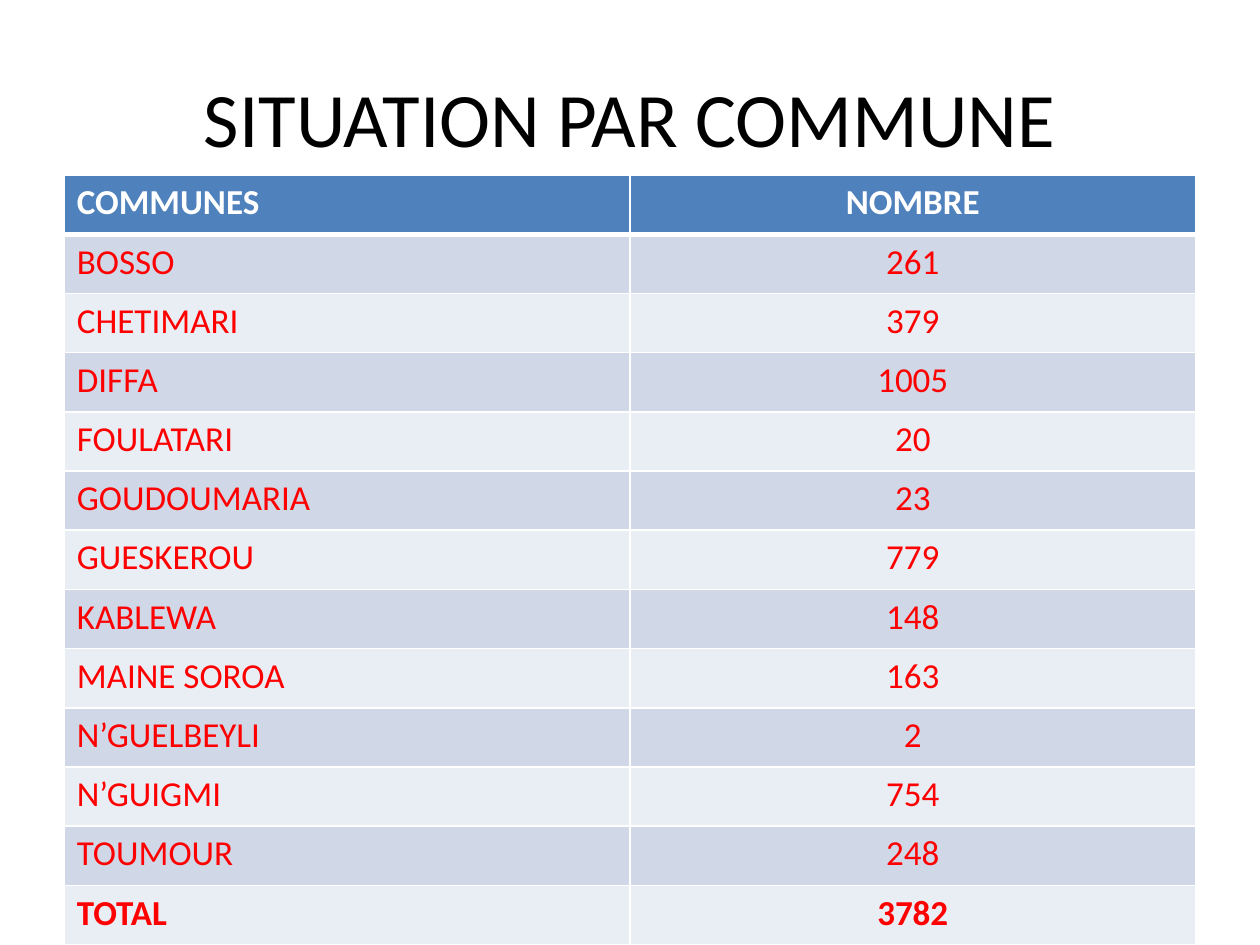
from pptx import Presentation
from pptx.dml.color import RGBColor
from pptx.enum.text import MSO_ANCHOR, PP_ALIGN
from pptx.oxml.ns import qn
from pptx.util import Pt
from lxml.etree import SubElement

TITLE = "SITUATION PAR COMMUNE"
ROWS = [
    ("COMMUNES", "NOMBRE"),
    ("BOSSO", "261"),
    ("CHETIMARI", "379"),
    ("DIFFA", "1005"),
    ("FOULATARI", "20"),
    ("GOUDOUMARIA", "23"),
    ("GUESKEROU", "779"),
    ("KABLEWA", "148"),
    ("MAINE SOROA", "163"),
    ("N’GUELBEYLI", "2"),
    ("N’GUIGMI", "754"),
    ("TOUMOUR", "248"),
    ("TOTAL", "3782"),
]
ALIGNS = (PP_ALIGN.LEFT, PP_ALIGN.CENTER)
BANDS = ("E9EDF4", "D0D8E8")
BLUE, WHITE, RED, BLACK = "4F81BD", "FFFFFF", "FF0000", "000000"
LEFT, TOP, WIDTH, HIGH = 36.72, 100.08, 646.56, 33.84
BASE = {"name": "Calibri", "bold": False}
HEAD = {"size": Pt(44)}
CELL = {"size": Pt(20)}


def color(fill, code):
    """Give a fill one solid colour."""
    fill.solid()
    fill.fore_color.rgb = RGBColor.from_string(code)


def write(frame, text, align, code, form):
    """Put one formatted line in a text frame."""
    para = frame.paragraphs[0]
    para.alignment = align
    run = para.add_run()
    run.text = text
    for key, value in {**BASE, **form}.items():
        setattr(run.font, key, value)
    color(run.font.fill, code)


def border(cell, sides):
    """Draw white lines on the sides of a cell."""
    props = cell._tc.get_or_add_tcPr()
    for side, width in sides.items():
        line = SubElement(props, qn(f"a:ln{side}"), w=str(Pt(width)))
        fill = SubElement(line, qn("a:solidFill"))
        SubElement(fill, qn("a:srgbClr"), val=WHITE)


def main():
    """Build the slide and save it."""
    deck = Presentation()
    deck.slide_width, deck.slide_height = Pt(720), Pt(540)
    slide = deck.slides.add_slide(deck.slide_layouts[6])

    box = slide.shapes.add_textbox(Pt(36), Pt(21.6), Pt(648), Pt(90))
    frame = box.text_frame
    frame.word_wrap = True
    frame.vertical_anchor = MSO_ANCHOR.MIDDLE
    write(frame, TITLE, PP_ALIGN.CENTER, BLACK, HEAD)

    count = len(ROWS)
    table = slide.shapes.add_table(
        count, len(ALIGNS), Pt(LEFT), Pt(TOP), Pt(WIDTH), Pt(HIGH * count)
    ).table
    for r, row in enumerate(ROWS):
        table.rows[r].height = Pt(HIGH)
        back, ink = (BANDS[r % 2], RED) if r else (BLUE, WHITE)
        form = {**CELL, "bold": r in (0, count - 1)}
        sides = {"L": 1, "R": 1, "T": 3 if r == 1 else 1, "B": 1 if r else 3}
        for c, text in enumerate(row):
            cell = table.cell(r, c)
            border(cell, sides)
            color(cell.fill, back)
            write(cell.text_frame, text, ALIGNS[c], ink, form)

    deck.save("out.pptx")


if __name__ == "__main__":
    main()
